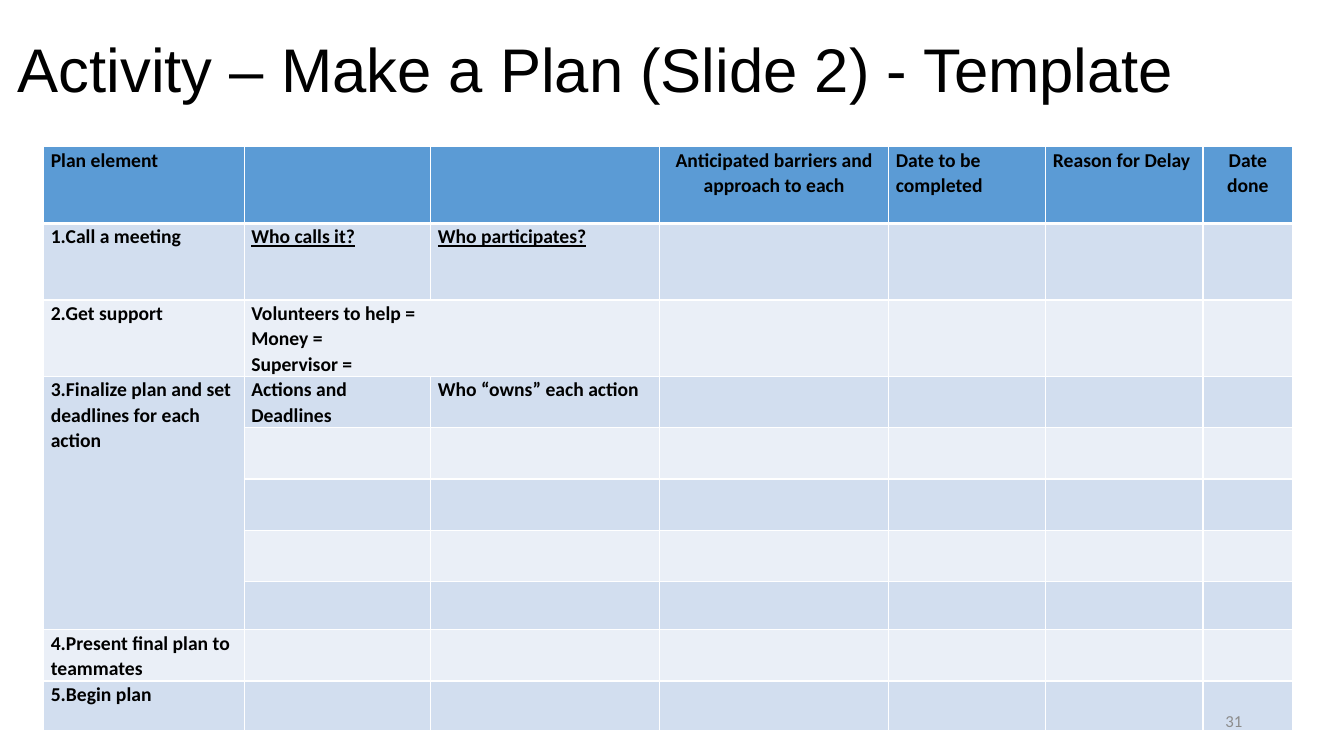
import lxml.etree
import pptx
import pptx.dml.color
import pptx.enum.text
import pptx.oxml.ns
import pptx.util

Cm, Pt = pptx.util.Cm, pptx.util.Pt
Align = pptx.enum.text.PP_ALIGN
qn = pptx.oxml.ns.qn


def colour(value):
    return pptx.dml.color.RGBColor.from_string(value)


def add_run(paragraph, text, font, size, value):
    run = paragraph.add_run()
    run.text = text
    run.font.name = font
    run.font.size = Pt(size)
    run.font.color.rgb = colour(value)
    return run


presentation = pptx.Presentation()
presentation.slide_width, presentation.slide_height = Cm(33.86), Cm(19.05)
slide = presentation.slides.add_slide(presentation.slide_layouts[6])

# Title
title = slide.shapes.add_textbox(Cm(0.2), Cm(0), Cm(30.71), Cm(3.68)).text_frame
title.word_wrap = True
title.vertical_anchor = pptx.enum.text.MSO_ANCHOR.MIDDLE
title.paragraphs[0].line_spacing = 0.9
add_run(title.paragraphs[0], "Activity – Make a Plan (Slide 2) - Template", "Arial", 44, "000000")

# Plan table
column_widths = [5.05, 4.7, 5.77, 5.77, 3.96, 3.96, 2.26]
row_heights = [1.93] * 3 + [1.29] * 4 + [1.22, 1.29, 1.25]
plan = slide.shapes.add_table(
    len(row_heights), len(column_widths), Cm(1.1), Cm(3.7),
    Cm(sum(column_widths)), Cm(sum(row_heights))).table
plan.first_row = plan.horz_banding = False
for column, width in zip(plan.columns, column_widths):
    column.width = Cm(width)
for row, height in zip(plan.rows, row_heights):
    row.height = Cm(height)
plan.cell(2, 1).merge(plan.cell(2, 2))
plan.cell(3, 0).merge(plan.cell(7, 0))

# Fills and white rules, with a thicker rule under the header
for r in range(len(row_heights)):
    for c in range(len(column_widths)):
        cell = plan.cell(r, c)
        if cell.is_spanned:
            continue
        cell.margin_left = cell.margin_right = Cm(0.18)
        cell.margin_top = cell.margin_bottom = 0
        rules = {"a:lnL": 1, "a:lnR": 1, "a:lnT": 3 if r == 1 else 1, "a:lnB": 3 if r == 0 else 1}
        for side, points in rules.items():
            rule = lxml.etree.SubElement(cell._tc.get_or_add_tcPr(), qn(side), w=str(Pt(points)))
            rule_fill = lxml.etree.SubElement(rule, qn("a:solidFill"))
            lxml.etree.SubElement(rule_fill, qn("a:srgbClr"), val="FFFFFF")
        cell.fill.solid()
        cell.fill.fore_color.rgb = colour("5B9BD5" if r == 0 else "D2DEEF" if r % 2 else "EAEFF7")

# Wording by row and column
wording = {
    (0, 0): ["Plan element"],
    (0, 3): ["Anticipated barriers and approach to each"],
    (0, 4): ["Date to be completed"],
    (0, 5): ["Reason for Delay"],
    (0, 6): ["Date done"],
    (1, 0): ["1.Call a meeting"],
    (1, 1): ["Who calls it?"],
    (1, 2): ["Who participates?"],
    (2, 0): ["2.Get support"],
    (2, 1): ["Volunteers to help =", "Money =", "Supervisor ="],
    (3, 0): ["3.Finalize plan and set deadlines for each action"],
    (3, 1): ["Actions and Deadlines"],
    (3, 2): ["Who “owns” each action"],
    (8, 0): ["4.Present final plan to teammates"],
    (9, 0): ["5.Begin plan"],
}
centred = [(0, 3), (0, 6)]
underlined = [(1, 1), (1, 2)]
for place, lines in wording.items():
    frame = plan.cell(*place).text_frame
    for i, line in enumerate(lines):
        paragraph = frame.add_paragraph() if i else frame.paragraphs[0]
        paragraph.line_spacing = 1.07
        paragraph.alignment = Align.CENTER if place in centred else Align.LEFT
        run = add_run(paragraph, line, "Calibri", 14, "000000")
        run.font.bold = True
        run.font.underline = place in underlined

# Slide number
number = slide.shapes.add_textbox(Cm(23.93), Cm(17.66), Cm(7.62), Cm(1.01)).text_frame
number.word_wrap = True
number.vertical_anchor = pptx.enum.text.MSO_ANCHOR.MIDDLE
number.paragraphs[0].alignment = Align.RIGHT
add_run(number.paragraphs[0], "31", "Calibri", 12, "8C8C8C")

presentation.save("out.pptx")
